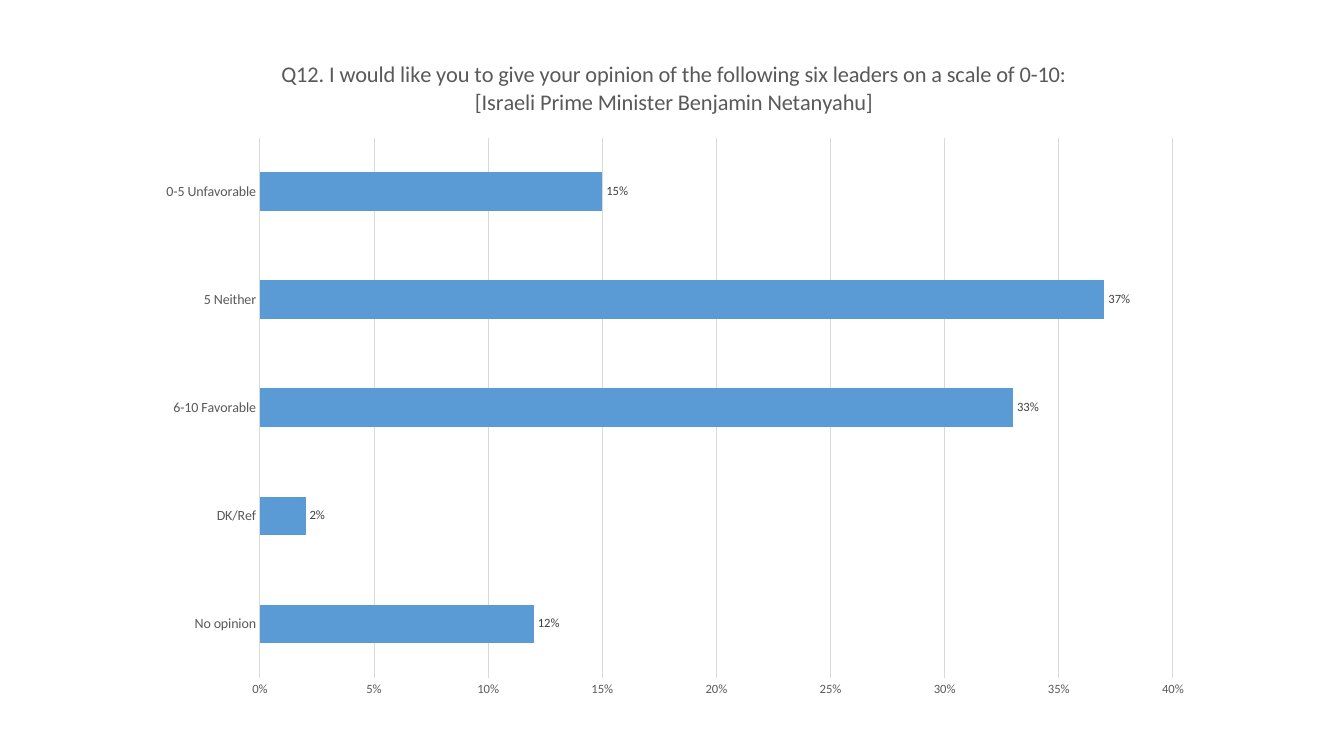
from lxml.etree import SubElement
from pptx import Presentation
from pptx.chart.data import CategoryChartData
from pptx.dml.color import RGBColor
from pptx.enum.chart import XL_CHART_TYPE, XL_LABEL_POSITION, XL_TICK_MARK
from pptx.oxml.ns import qn
from pptx.util import Inches, Pt

QUESTION = ("Q12. I would like you to give your opinion of the following six "
            "leaders on a scale of 0-10: [Israeli Prime Minister Benjamin Netanyahu]")
# Listed from the bottom bar to the top bar
ANSWERS = {
    "No opinion": 0.12,
    "DK/Ref": 0.02,
    "6-10 Favorable": 0.33,
    "5 Neither": 0.37,
    "0-5 Unfavorable": 0.15,
}
BAR, GRID, TEXT, LABEL = "5B9BD5", "D9D9D9", "595959", "404040"


def color(hex_code):
    return RGBColor.from_string(hex_code)


def style_font(font, size, hex_code):
    font.name = "Calibri"
    font.size = Pt(size)
    font.bold = False
    font.color.rgb = color(hex_code)


def style_line(line, hex_code):
    line.color.rgb = color(hex_code)
    line.width = Pt(0.75)


def place_plot(chart, **shares):
    """Place the inner plot area, in shares of the chart's size."""
    plot_area = chart._chartSpace.chart.plotArea
    for old in plot_area.findall(qn("c:layout")):
        plot_area.remove(old)
    layout = SubElement(plot_area, qn("c:layout"))
    plot_area.insert(0, layout)
    manual = SubElement(layout, qn("c:manualLayout"))
    settings = {"layoutTarget": "inner", "xMode": "edge", "yMode": "edge", **shares}
    for tag, value in settings.items():
        SubElement(manual, qn(f"c:{tag}")).set("val", str(value))


def style_axes(chart):
    answers, percent = chart.category_axis, chart.value_axis
    for axis, size in ((answers, 10), (percent, 9)):
        axis.major_tick_mark = axis.minor_tick_mark = XL_TICK_MARK.NONE
        style_font(axis.tick_labels.font, size, TEXT)
    style_line(answers.format.line, GRID)

    percent.minimum_scale, percent.maximum_scale = 0, 0.4
    percent.major_unit = 0.05
    percent.tick_labels.number_format = "0%"
    percent.tick_labels.number_format_is_linked = False
    percent.format.line.fill.background()
    style_line(percent.major_gridlines.format.line, GRID)


def style_bars(plot):
    plot.gap_width = 182
    plot.vary_by_categories = False
    bars = plot.series[0]
    bars.format.fill.solid()
    bars.format.fill.fore_color.rgb = color(BAR)

    labels = bars.data_labels
    labels.show_value = True
    labels.number_format = "0%"
    labels.number_format_is_linked = False
    labels.position = XL_LABEL_POSITION.OUTSIDE_END
    style_font(labels.font, 9, LABEL)


def add_opinion_chart(s, left, top, width, height):
    data = CategoryChartData(number_format="0%")
    data.categories = list(ANSWERS)
    data.add_series("Series 1", list(ANSWERS.values()))
    chart = s.shapes.add_chart(XL_CHART_TYPE.BAR_CLUSTERED,
                               left, top, width, height, data).chart
    chart.has_legend = False
    chart.font.name = "Calibri"
    chart.font.size = Pt(10)

    # Question as the chart title
    tf = chart.chart_title.text_frame
    tf.text = QUESTION
    style_font(tf.paragraphs[0].font, 16, TEXT)
    chart.chart_title.include_in_layout = False

    place_plot(chart, x=0.11, y=0.15, w=0.86, h=0.8)
    style_axes(chart)
    style_bars(chart.plots[0])


def main():
    prs = Presentation()
    prs.slide_width, prs.slide_height = Inches(13.33), Inches(7.5)
    s = prs.slides.add_slide(prs.slide_layouts[6])
    add_opinion_chart(s, Inches(1.42), Inches(0.36), Inches(10.53), Inches(6.7))
    prs.save("out.pptx")


if __name__ == "__main__":
    main()
